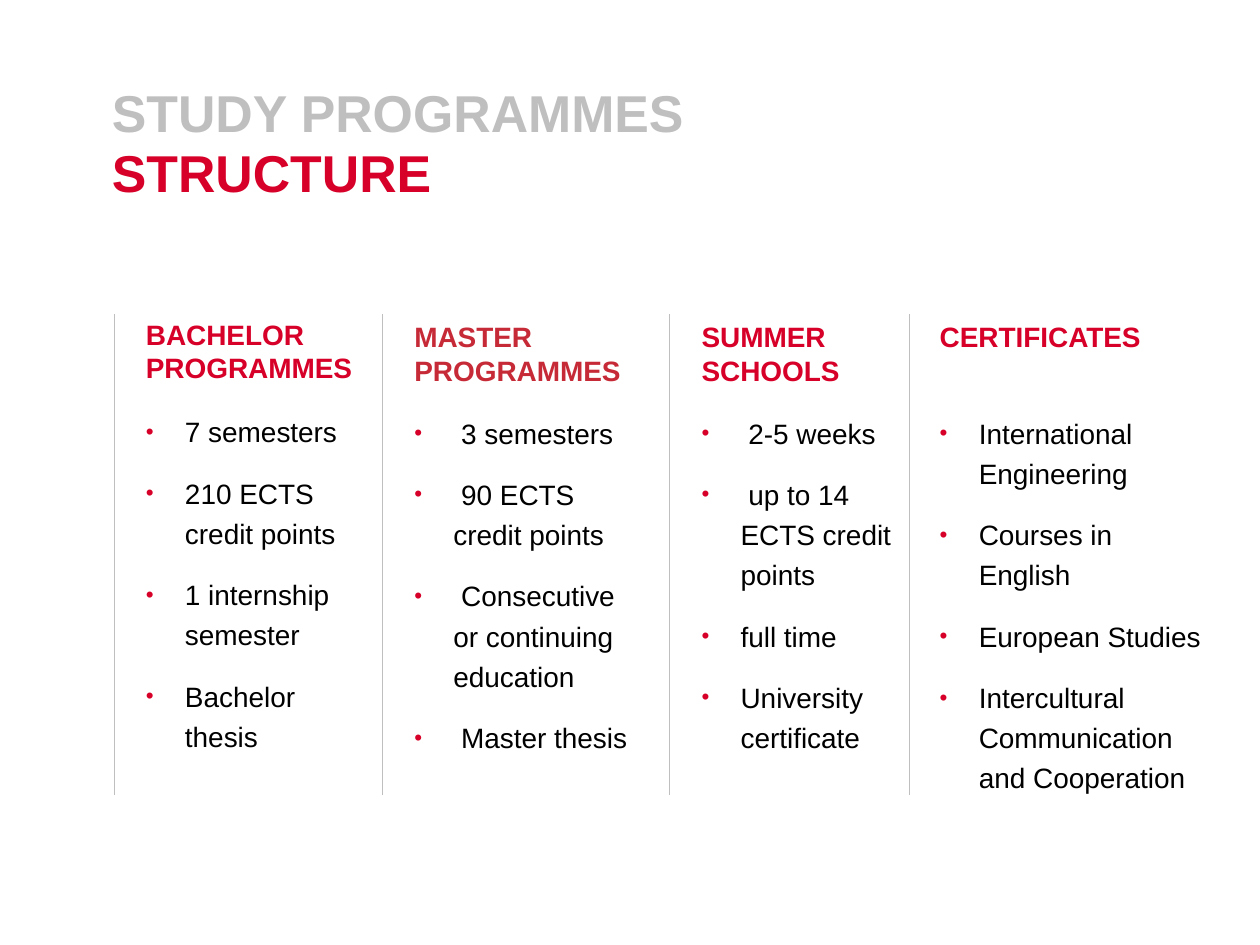
from dataclasses import dataclass

from lxml import etree
from pptx import Presentation, util as u
from pptx.dml.color import RGBColor
from pptx.enum import shapes, text
from pptx.oxml import ns


@dataclass(frozen=True)
class Theme:
    font: str = "Arial"
    red: str = "D70028"
    dark_red: str = "C72A37"
    grey: str = "BFBFBF"
    black: str = "000000"
    title_size: float = 29.6
    text_size: float = 16
    rule_width: float = 0.25
    indent: float = 0.31


@dataclass(frozen=True)
class Column:
    rule_x: float
    text_x: float
    head_w: float
    body_w: float
    body_h: float
    heading: str
    items: tuple
    color: str = Theme.red
    head_y: float = 2.49
    body_y: float = 3.2


WIDTH, HEIGHT = 10, 7.5
RULE_TOP, RULE_BOTTOM = 2.49, 6.31
HEAD_LINE, PADDING = 0.27, 0.1
T = Theme()

TITLES = (("STUDY PROGRAMMES", T.grey), ("STRUCTURE", T.red))
TITLE_X, TITLE_Y, TITLE_STEP = 0.79, 0.55, 0.48

COLUMNS = (
    Column(0.91, 1.06, 1.97, 1.81, 3.35, "BACHELOR\nPROGRAMMES",
           ("7 semesters", "210 ECTS credit points",
            "1 internship semester", "Bachelor thesis"),
           head_y=2.47, body_y=3.19),
    Column(3.03, 3.19, 2.05, 2.05, 3.36, "MASTER\nPROGRAMMES",
           (" 3 semesters", " 90 ECTS \vcredit points",
            " Consecutive \vor continuing education", " Master thesis"),
           color=T.dark_red),
    Column(5.31, 5.47, 1.67, 1.73, 2.86, "SUMMER\nSCHOOLS",
           (" 2-5 weeks", " up to 14 ECTS credit points",
            "full time", "University certificate")),
    Column(7.22, 7.36, 2.36, 2.28, 3.18, "CERTIFICATES",
           ("International Engineering", "Courses in English",
            "European Studies", "Intercultural Communication and Cooperation")),
)


def add_text(slide, box, content, size, color, bold=False, grow=True):
    sp = slide.shapes.add_textbox(*map(u.Inches, box))
    tf = sp.text_frame
    tf.text = content
    tf.word_wrap = True
    if grow:
        tf.auto_size = text.MSO_AUTO_SIZE.SHAPE_TO_FIT_TEXT
    for p in tf.paragraphs:
        for r in p.runs:
            r.font.name = T.font
            r.font.size = u.Pt(size)
            r.font.bold = bold
            r.font.color.rgb = RGBColor.from_string(color)
    return tf


def add_bullet(p):
    pPr = p._p.get_or_add_pPr()
    pPr.set("marL", str(u.Inches(T.indent)))
    pPr.set("indent", str(-u.Inches(T.indent)))
    color = etree.SubElement(pPr, ns.qn("a:buClr"))
    etree.SubElement(color, ns.qn("a:srgbClr"), val=T.red)
    etree.SubElement(pPr, ns.qn("a:buSzPct"), val="80000")
    etree.SubElement(pPr, ns.qn("a:buFont"), typeface=T.font)
    etree.SubElement(pPr, ns.qn("a:buChar"), char="•")


def add_title(slide, row, content, color):
    box = (TITLE_X, TITLE_Y + row * TITLE_STEP, 0.85 * WIDTH, 0.52)
    tf = add_text(slide, box, content, T.title_size, color, bold=True, grow=False)
    tf.margin_top = u.Inches(0.09)


def add_rule(slide, x):
    ends = map(u.Inches, (x, RULE_BOTTOM, x, RULE_TOP))
    line = slide.shapes.add_connector(shapes.MSO_CONNECTOR.STRAIGHT, *ends)
    line.line.color.rgb = RGBColor.from_string(T.grey)
    line.line.width = u.Pt(T.rule_width)
    etree.SubElement(line._element.spPr, ns.qn("a:effectLst"))


def add_column(slide, col):
    add_rule(slide, col.rule_x)
    # Heading
    head_h = PADDING + HEAD_LINE * len(col.heading.split("\n"))
    add_text(slide, (col.text_x, col.head_y, col.head_w, head_h),
             col.heading, T.text_size, col.color, bold=True)
    # Bullet list
    tf = add_text(slide, (col.text_x, col.body_y, col.body_w, col.body_h),
                  "\n".join(col.items), T.text_size, T.black)
    for p in tf.paragraphs:
        add_bullet(p)
        p.level = 1
        p.line_spacing = 1.2
        p.space_after = u.Pt(12)


def main():
    prs = Presentation()
    prs.slide_width, prs.slide_height = u.Inches(WIDTH), u.Inches(HEIGHT)
    slide = prs.slides.add_slide(prs.slide_layouts[6])
    # Two-line title
    for row, (content, color) in enumerate(TITLES):
        add_title(slide, row, content, color)
    # Programme columns
    for col in COLUMNS:
        add_column(slide, col)
    prs.save("out.pptx")


if __name__ == "__main__":
    main()
